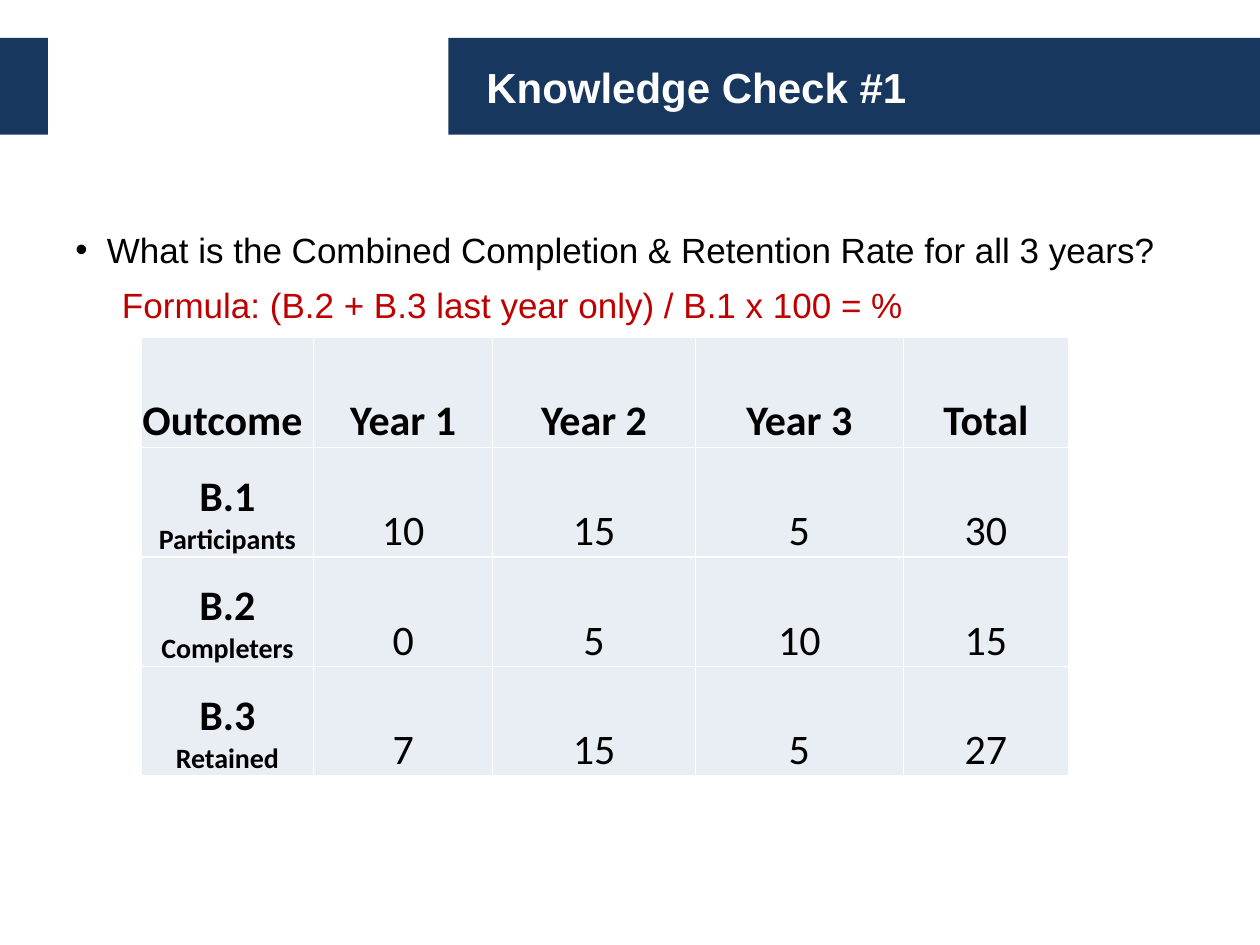
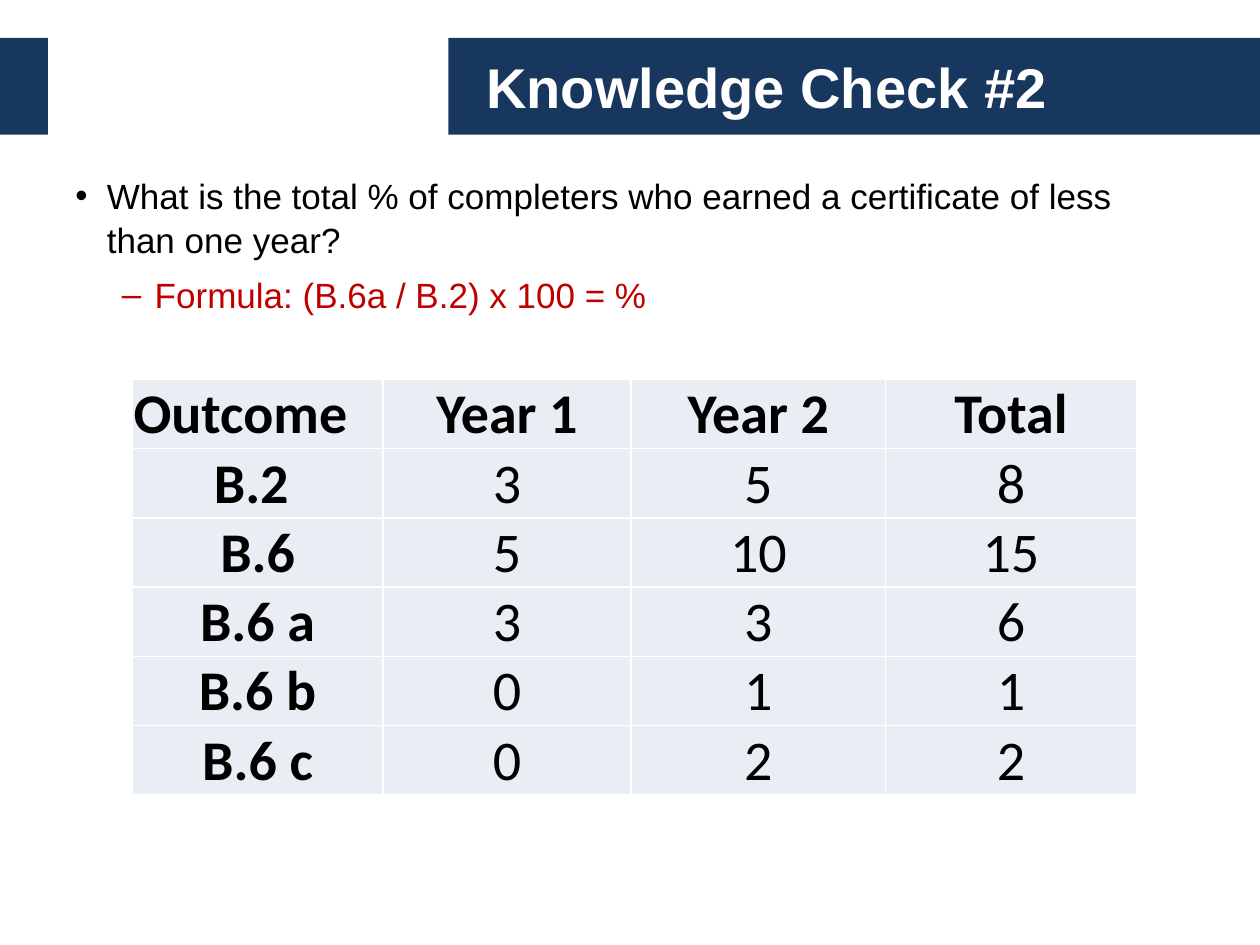
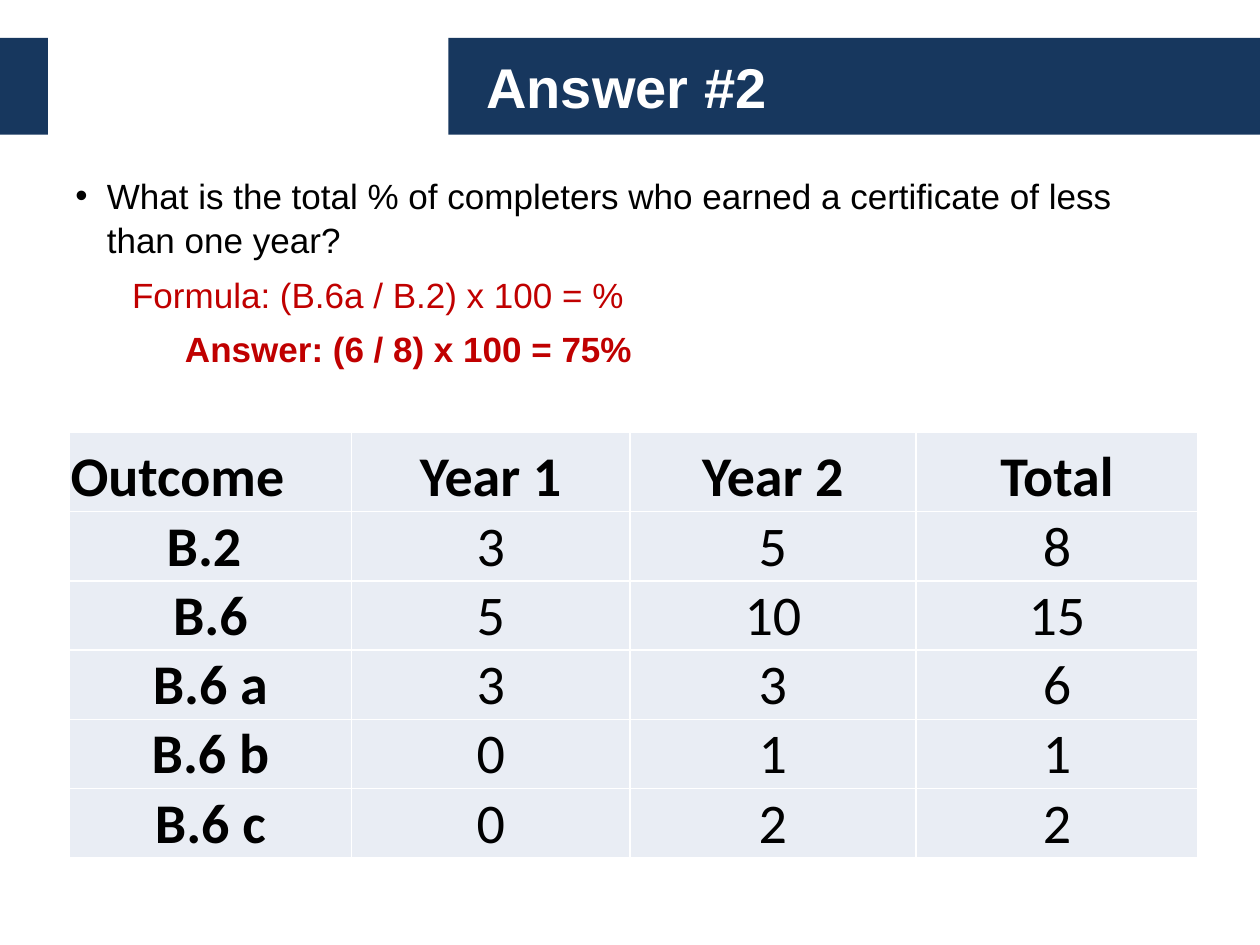
from lxml.etree import SubElement
from pptx import Presentation
from pptx.dml.color import RGBColor
from pptx.enum.shapes import MSO_SHAPE as Kind
from pptx.enum.text import MSO_ANCHOR as Anchor, MSO_AUTO_SIZE as Fit, PP_ALIGN as Align
from pptx.oxml.ns import qn
from pptx.util import Inches, Pt

NAVY = RGBColor(0x17, 0x37, 0x5E)
WHITE = RGBColor(0xFF, 0xFF, 0xFF)
BLACK = RGBColor(0, 0, 0)
RED = RGBColor(0xC0, 0, 0)
PALE = RGBColor(0xE9, 0xED, 0xF4)

HEAD = "Arial"
CELL = "Calibri"

BAND_TOP, BAND_HIGH = 0.3, 0.77
BANDS = [(3.56, 6.44), (0, 0.38)]

RATE = [
    ["Outcome", "Year 1", "Year 2", "Year 3", "Total"],
    ["B.1\nParticipants", 10, 15, 5, 30],
    ["B.2\nCompleters", 0, 5, 10, 15],
    ["B.3\nRetained", 7, 15, 5, 27],
]
CERTS = [
    ["Outcome", "Year 1", "Year 2", "Total"],
    ["B.2 ", 3, 5, 8],
    ["B.6", 5, 10, 15],
    ["B.6 a", 3, 3, 6],
    ["B.6 b", 0, 1, 1],
    ["B.6 c", 0, 2, 2],
]
ASK = "What is the total % of completers who earned a certificate of less than one year?"
FORM = "Formula: (B.6a / B.2) x 100 = %"


def style(font, name, size, color, bold=False):
    font.name, font.size, font.bold = name, Pt(size), bold
    font.color.rgb = color


def add_head(slide, text, size):
    """Fill the title and lay the navy bands behind it."""
    title = slide.shapes.title
    title.left, title.top = Inches(3.76), Inches(BAND_TOP)
    title.width, title.height = Inches(5.74), Inches(BAND_HIGH)
    frame = title.text_frame
    frame.text = text
    frame.auto_size = Fit.NONE
    frame.vertical_anchor = Anchor.MIDDLE
    para = frame.paragraphs[0]
    para.alignment = Align.LEFT
    style(para.runs[0].font, HEAD, size, WHITE, True)
    for left, width in BANDS:
        band = slide.shapes.add_shape(Kind.RECTANGLE, Inches(left), Inches(BAND_TOP),
                                      Inches(width), Inches(BAND_HIGH))
        band.shadow.inherit = False
        band.fill.solid()
        band.fill.fore_color.rgb = NAVY
        band.line.fill.background()
        title._element.addprevious(band._element)


def add_body(slide, top, high, lines):
    """Write lines of (text, mark, left, hang, color, bold)."""
    box = slide.shapes.add_textbox(Inches(0.5), Inches(top), Inches(9), Inches(high))
    frame = box.text_frame
    frame.word_wrap = True
    frame.text = "\n".join(line[0] for line in lines)
    for i, (para, line) in enumerate(zip(frame.paragraphs, lines)):
        text, mark, left, hang, color, bold = line
        props = para._p.get_or_add_pPr()
        props.set("marL", str(Inches(left)))
        props.set("indent", str(-Inches(hang)))
        if mark:
            SubElement(props, qn("a:buFont"), typeface=HEAD)
            SubElement(props, qn("a:buChar"), char=mark)
        else:
            SubElement(props, qn("a:buNone"))
        para.level = 1 if i else 0
        para.line_spacing = 1.05
        para.space_before = Pt(3 if i else 0)
        para.space_after = Pt(3)
        style(para.runs[0].font, HEAD, 20, color, bold)


def edge(cell):
    """Draw a thin white line on each side of a cell."""
    props = cell._tc.get_or_add_tcPr()
    for side in "LRTB":
        line = SubElement(props, qn(f"a:ln{side}"), w=str(Pt(1)))
        fill = SubElement(line, qn("a:solidFill"))
        SubElement(fill, qn("a:srgbClr"), val=str(WHITE))


def set_cell(cell, text, size, bold, align):
    cell.text = text
    edge(cell)
    cell.fill.solid()
    cell.fill.fore_color.rgb = PALE
    cell.vertical_anchor = Anchor.BOTTOM
    cell.margin_left = cell.margin_right = cell.margin_top = Inches(0.01)
    cell.margin_bottom = 0
    for i, para in enumerate(cell.text_frame.paragraphs):
        para.alignment = align
        style(para.runs[0].font, CELL, 16 if i else size, BLACK, bold)


def add_grid(slide, left, top, cols, rows, data, size):
    shape = slide.shapes.add_table(len(rows), len(cols), Inches(left), Inches(top),
                                   Inches(sum(cols)), Inches(sum(rows)))
    table = shape.table
    table.first_row = table.horz_banding = False
    for col, width in zip(table.columns, cols):
        col.width = Inches(width)
    for row, high in zip(table.rows, rows):
        row.height = Inches(high)
    for r, items in enumerate(data):
        for c, item in enumerate(items):
            align = Align.CENTER if r or c else Align.LEFT
            set_cell(table.cell(r, c), str(item), size, r == 0 or c == 0, align)


def add_page(deck, title, size, body, grid):
    slide = deck.slides.add_slide(deck.slide_layouts[5])
    add_head(slide, title, size)
    add_body(slide, *body)
    add_grid(slide, *grid, size)


def ask(text):
    return text, "•", 0.25, 0.25, BLACK, False


def main():
    deck = Presentation()
    deck.slide_width, deck.slide_height = Inches(10), Inches(7.5)
    add_page(
        deck, "Knowledge Check #1", 24,
        (1.75, 4.95, [
            ask("What is the Combined Completion & Retention Rate for all 3 years?"),
            ("Formula: (B.2 + B.3 last year only) / B.1 x 100 = %", "", 0.37, 0, RED, False),
        ]),
        (1.12, 2.68, [1.37, 1.42, 1.61, 1.65, 1.31], [0.87] * 4, RATE))
    add_page(
        deck, "Knowledge Check #2", 32,
        (1.32, 5.38, [ask(ASK), (FORM, "–", 0.63, 0.26, RED, False)]),
        (1.05, 3.01, [1.99, 1.97, 2.02, 1.99], [0.55] * 6, CERTS))
    add_page(
        deck, "Answer #2", 32,
        (1.32, 5.38, [
            ask(ASK),
            (FORM, "", 0.45, 0, RED, False),
            ("Answer: (6 / 8) x 100 = 75%", "", 0.87, 0, RED, True),
        ]),
        (0.55, 3.43, [2.24, 2.21, 2.27, 2.24], [0.63] + [0.55] * 5, CERTS))
    deck.save("out.pptx")


if __name__ == "__main__":
    main()
